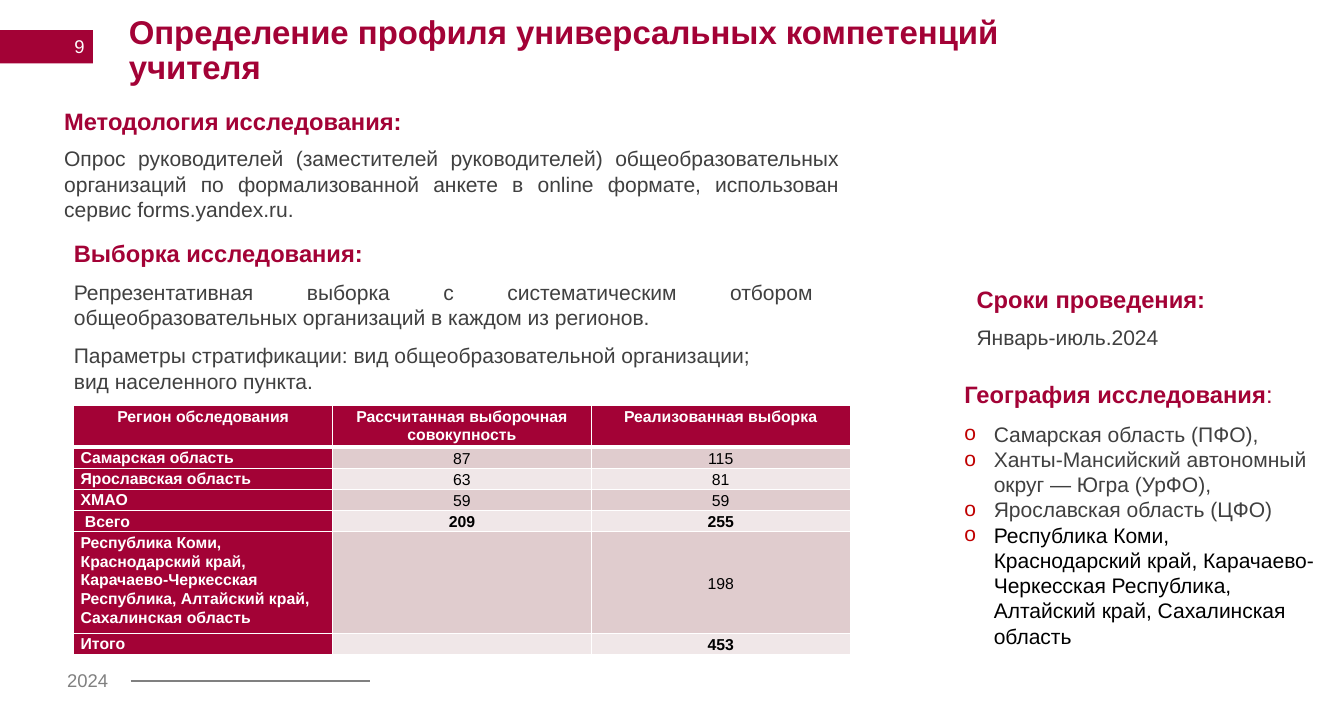
from lxml import etree
from pptx import Presentation
from pptx import util as u
from pptx.dml.color import RGBColor
from pptx.enum import shapes, text
from pptx.oxml.ns import qn

FONT = "Arial"
COLORS = {"wine": "A30236", "grey": "808080", "dark": "404040", "black": "000000",
          "white": "FFFFFF", "red": "C00000", "rose": "E0CCCE", "pale": "F0E7E8"}
LEFT, MID, RIGHT, FULL = (text.PP_ALIGN.LEFT, text.PP_ALIGN.CENTER,
                          text.PP_ALIGN.RIGHT, text.PP_ALIGN.JUSTIFY)
HANG = u.Cm(0.79)

ROWS = [
    ("Регион обследования", "Рассчитанная выборочная совокупность", "Реализованная выборка"),
    ("Самарская область", "87", "115"),
    ("Ярославская область", "63", "81"),
    ("ХМАО", "59", "59"),
    ("\u00a0Всего", "209", "255"),
    ("Республика Коми, Краснодарский край, Карачаево-Черкесская Республика, "
     "Алтайский край, Сахалинская область", "", "198"),
    ("Итого", "", "453"),
]
HEIGHTS = [1.1, 0.56, 0.56, 0.56, 0.56, 2.72, 0.56]
TOTALS = (4, 6)


def tint(name):
    return RGBColor.from_string(COLORS[name])


def style(run, size, color, bold=False):
    font = run.font
    font.name, font.size, font.bold = FONT, u.Pt(size), bold
    font.color.rgb = tint(color)


def write(par, words, size, color, bold=False, align=LEFT, before=0, spacing=None):
    par.text = words
    par.alignment = align
    par.space_before = u.Pt(before)
    if spacing:
        par.line_spacing = spacing
    for run in par.runs:
        style(run, size, color, bold)


def head(par, words, before=0):
    write(par, words, 18, "wine", True, before=before)


def body(par, words, before=0, align=LEFT, color="dark"):
    write(par, words, 16, color, align=align, before=before)


def indent(par, bullet=True):
    props = par._p.get_or_add_pPr()
    props.set("marL", str(HANG))
    props.set("indent", str(-HANG if bullet else 0))
    if bullet:
        color = etree.SubElement(props, qn("a:buClr"))
        etree.SubElement(color, qn("a:srgbClr"), val=COLORS["red"])
        etree.SubElement(props, qn("a:buFont"), typeface=FONT)
        etree.SubElement(props, qn("a:buChar"), char="o")


def box(slide, left, top, width, height):
    frame = slide.shapes.add_textbox(*map(u.Cm, (left, top, width, height))).text_frame
    frame.word_wrap = True
    return frame


def edge(cell, side, width):
    line = etree.SubElement(cell._tc.get_or_add_tcPr(), qn("a:ln" + side),
                            w=str(u.Pt(width)))
    solid = etree.SubElement(line, qn("a:solidFill"))
    etree.SubElement(solid, qn("a:srgbClr"), val=COLORS["white"])


def paint(cell, row, col, words):
    cell.margin_left = cell.margin_right = u.Cm(0.18)
    cell.margin_top, cell.margin_bottom = u.Cm(0.03), 0
    for side in "LRTB":
        thick = (row, side) in ((0, "B"), (1, "T"))
        edge(cell, side, 3 if thick else 1)
    label = row == 0 or col == 0
    cell.fill.solid()
    cell.fill.fore_color.rgb = tint("wine" if label else "rose" if row % 2 else "pale")
    cell.vertical_anchor = text.MSO_ANCHOR.TOP if label else text.MSO_ANCHOR.MIDDLE
    par = cell.text_frame.paragraphs[0]
    write(par, words, 12, "white" if label else "black", label or row in TOTALS,
          LEFT if col == 0 and row else MID, spacing=1.06)
    if not words:
        etree.SubElement(par._p, qn("a:endParaRPr"), sz="1200")


def grid(slide):
    size = map(u.Cm, (1.98, 10.87, 20.79, sum(HEIGHTS)))
    table = slide.shapes.add_table(len(ROWS), 3, *size).table
    for col in table.columns:
        col.width = u.Cm(6.93)
    for row, (height, items) in enumerate(zip(HEIGHTS, ROWS)):
        table.rows[row].height = u.Cm(height)
        for col, words in enumerate(items):
            paint(table.cell(row, col), row, col, words)


def frame_marks(slide):
    # Page number tab
    tab = slide.shapes.add_shape(shapes.MSO_SHAPE.RECTANGLE,
                                 *map(u.Cm, (0, 0.81, 2.49, 0.89)))
    tab.shadow.inherit = False
    tab.fill.solid()
    tab.fill.fore_color.rgb = tint("wine")
    tab.line.fill.background()
    page = box(slide, 0.46, 0.74, 2.06, 1.02)
    page.vertical_anchor = text.MSO_ANCHOR.MIDDLE
    write(page.paragraphs[0], "9", 14, "white", align=RIGHT)

    # Footer year and rule
    year = box(slide, 1.55, 17.81, 1.7, 0.86)
    write(year.paragraphs[0], "2024", 14, "grey")
    rule = slide.shapes.add_connector(shapes.MSO_CONNECTOR.STRAIGHT,
                                      *map(u.Cm, (3.5, 18.26, 9.9, 18.26)))
    rule.line.color.rgb = tint("grey")
    rule.line.width = u.Pt(1.5)
    etree.SubElement(rule._element.spPr, qn("a:effectLst"))


def main():
    deck = Presentation()
    deck.slide_width, deck.slide_height = u.Cm(36), u.Cm(19)
    slide = deck.slides.add_slide(deck.slide_layouts[6])
    frame_marks(slide)

    # Title
    title = box(slide, 3.45, 0.43, 26.6, 1.98)
    title.margin_left = title.margin_right = title.margin_top = title.margin_bottom = 0
    write(title.paragraphs[0], "Определение профиля универсальных компетенций учителя",
          25, "wine", True, spacing=0.9)

    # Method
    method = box(slide, 1.47, 2.74, 21.26, 3.43)
    head(method.paragraphs[0], "Методология исследования:")
    body(method.add_paragraph(),
         "Опрос руководителей (заместителей руководителей) общеобразовательных "
         "организаций по формализованной анкете в online формате, использован "
         "сервис forms.yandex.ru.", 8, FULL)

    # Sample
    sample = box(slide, 1.73, 6.27, 20.3, 5.16)
    head(sample.paragraphs[0], "Выборка исследования:")
    for words, before in (
            ("Репрезентативная выборка с систематическим отбором "
             "общеобразовательных организаций в каждом из регионов.", 9.6),
            ("Параметры стратификации: вид общеобразовательной организации;", 9.6),
            ("вид населенного пункта.", 0)):
        body(sample.add_paragraph(), words, before, FULL)
    grid(slide)

    # Dates
    dates = box(slide, 25.91, 7.52, 8.28, 2.06)
    head(dates.paragraphs[0], "Сроки проведения:")
    body(dates.add_paragraph(), "Январь-июль.2024", 8)

    # Places
    places = box(slide, 25.58, 10.06, 9.98, 8.9)
    head(places.paragraphs[0], "География исследования")
    colon = places.paragraphs[0].add_run()
    colon.text = ":"
    style(colon, 18, "wine")
    for words, bullet, before, color in (
            ("Самарская область (ПФО),", True, 9.6, "dark"),
            ("Ханты-Мансийский автономный", True, 0, "dark"),
            ("округ — Югра (УрФО),", False, 0, "dark"),
            ("Ярославская область (ЦФО)", True, 0, "dark"),
            ("Республика Коми, Краснодарский край, Карачаево-Черкесская Республика, "
             "Алтайский край, Сахалинская область", True, 0, "black")):
        par = places.add_paragraph()
        indent(par, bullet)
        body(par, words, before, color=color)

    deck.save("out.pptx")


if __name__ == "__main__":
    main()
